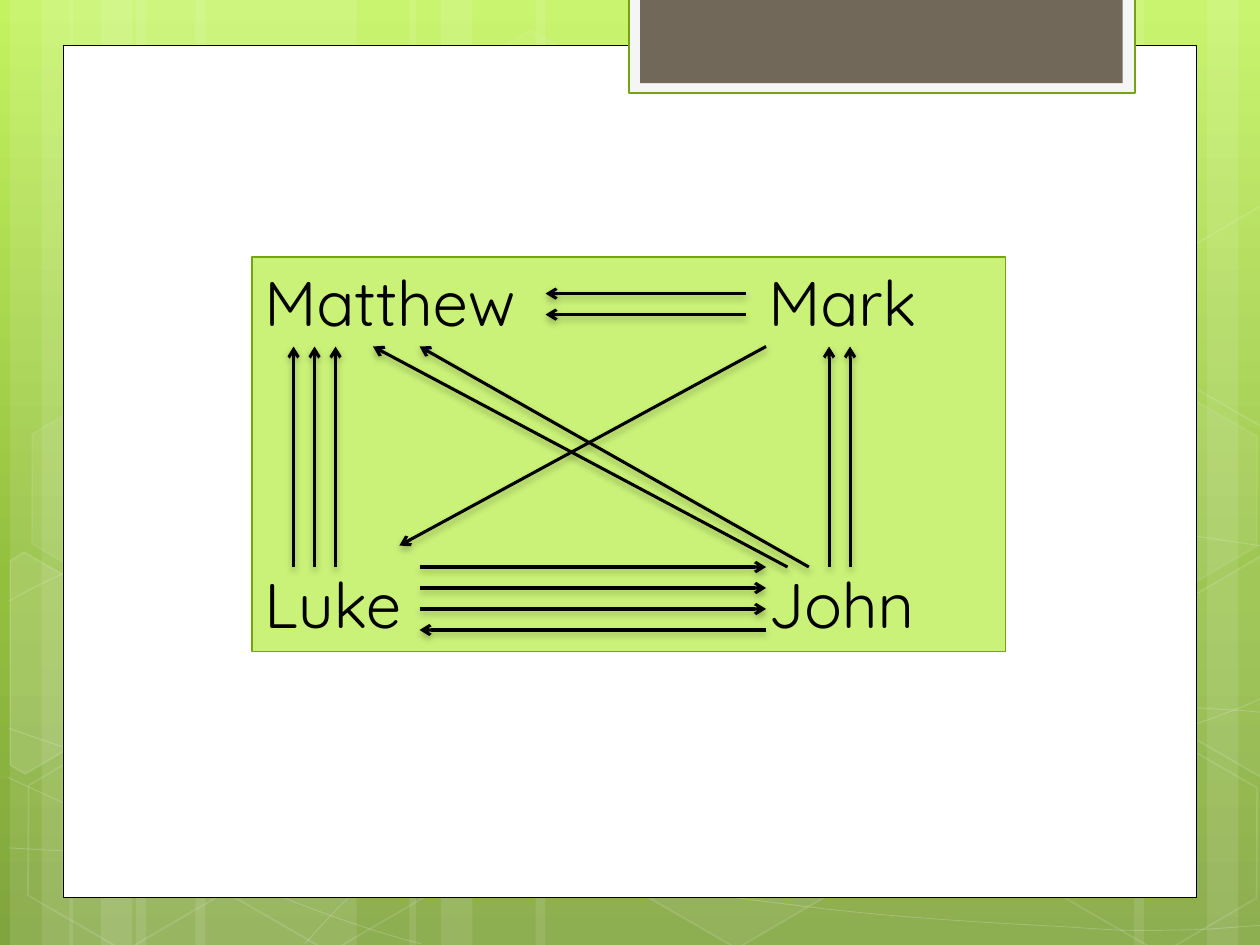
import copy
import dataclasses
import math

import pptx
import pptx.dml.color
import pptx.enum.shapes
import pptx.enum.text
import pptx.oxml
import pptx.oxml.ns
import pptx.util

Inches = pptx.util.Inches
Pt = pptx.util.Pt
qn = pptx.oxml.ns.qn
PRESET = pptx.enum.shapes.MSO_SHAPE


@dataclasses.dataclass(frozen=True)
class Theme:
    """Hold the colours, font and sizes of the slide."""
    sky: tuple = ((0, "C3F35F"), (0.62, "93BF3F"), (1, "81A53E"))
    white: str = "FFFFFF"
    ink: str = "000000"
    tab_rim: str = "F5F5F5"
    tab_core: str = "71685A"
    edge: str = "74A510"
    card: str = "CAF278"
    font: str = "Quicksand"
    name_size: int = 36
    row_gap: float = 129.3
    arrow_width: float = 1.75


@dataclasses.dataclass(frozen=True)
class Box:
    """Hold a region in inches."""
    left: float
    top: float
    width: float
    height: float

    def inner(self, left, top, width, height):
        """Return a box whose place is given relative to this one."""
        return Box(self.left + left, self.top + top, width, height)

    def emu(self):
        """Return the box as lengths."""
        return [Inches(v) for v in (self.left, self.top, self.width, self.height)]


THEME = Theme()
GAP = 1 / 6
TILT = 30
STRIPES = [(1.08, 1.75), (0.08, 0.5), (0.33, 0.83), (1.55, 1.75), (0.55, 0.5), (0.8, 0.83),
           (7.33, 1.75), (9.58, 0.5), (9, 0.83), (4.25, 3.08), (3.25, 0.5), (3.5, 0.83)]
CURVES = [
    [(0.07, 6.73), (0.61, 6.76), (1.15, 6.79), (1.9, 6.78), (2.65, 6.77), (3.58, 6.75),
     (4.58, 6.65), (5.58, 6.55), (7, 6.36), (7.92, 6.17), (8.83, 5.98), (9.77, 5.68), (10.07, 5.51)],
    [(0.07, 4.77), (0.36, 4.61), (0.65, 4.46), (1.21, 4.31), (1.78, 4.16), (2.59, 3.94),
     (3.47, 3.87), (4.36, 3.8), (5.44, 3.79), (6.54, 3.87), (7.64, 3.95), (9.47, 4.26), (10.07, 4.34)],
    [(0.06, 6.17), (1.27, 6.72), (2.47, 7.27), (3.34, 7.49)],
    [(0.07, 5.78), (0.38, 5.89), (0.7, 6), (1.28, 6.16), (1.86, 6.31), (2.73, 6.56), (3.57, 6.73),
     (4.4, 6.9), (5.45, 7.08), (6.28, 7.18), (7.11, 7.29), (8, 7.33), (8.53, 7.36),
     (9.05, 7.4), (9.19, 7.38), (9.45, 7.38), (9.71, 7.37), (9.89, 7.35), (10.07, 7.34)],
    [(2.42, 7.49), (2.6, 7.29), (2.78, 7.09), (3.02, 6.91), (3.26, 6.73), (3.6, 6.53), (3.88, 6.39),
     (4.16, 6.25), (4.33, 6.19), (4.7, 6.09), (5.06, 5.99), (5.73, 5.85), (6.08, 5.78),
     (6.44, 5.71), (6.49, 5.71), (6.8, 5.69), (7.11, 5.66), (7.6, 5.63), (7.94, 5.62),
     (8.29, 5.61), (8.86, 5.62), (8.86, 5.62), (9.08, 5.62), (9.31, 5.62), (9.53, 5.62),
     (9.71, 5.63), (9.88, 5.64), (9.97, 5.65), (10.06, 5.66), (10.03, 5.65), (10.06, 5.66)],
]
HEXAGONS = [(3.34, 0.36, 4, 8), (4.97, 5.89, 6, 12), (0.11, 5.91, 0, 12), (0.14, 3.12, 7, 8),
            (1.74, 5.92, 0, 12), (7.53, 4.53, 10, 12), (8.34, 5.93, 0, 12), (8.34, 3.14, 7, 8)]
CUT_HEXAGONS = [
    ((0.36, 5.35), 10,
     [(0.08, 4.45), (0.19, 4.38), (0.96, 4.82), (0.95, 5.7), (0.2, 6.14), (0.08, 6.07)]),
    ((9.85, 5.2), 4,
     [(9.26, 4.85), (10.01, 4.41), (10.09, 4.46), (10.09, 6.13), (10.02, 6.17), (9.26, 5.73)]),
    ((9.85, 2.41), 0,
     [(9.26, 2.07), (10.01, 1.63), (10.1, 1.68), (10.09, 3.35), (10.02, 3.39), (9.26, 2.95)]),
]
ARROWS = [
    ((3.92, 0.29), (2.33, 0.29), (0, GAP), 2),
    ((4.58, 2.46), (4.58, 0.71), (GAP, 0), 2),
    ((0.33, 2.46), (0.33, 0.71), (GAP, 0), 3),
    ((1.33, 2.46), (4.08, 2.46), (0, GAP), 3),
    ((4.08, 2.96), (1.33, 2.96), (0, 0), 1),
    ((4.42, 2.46), (1.33, 0.71), (0, 0), 1),
    ((4.25, 2.46), (0.96, 0.71), (0, 0), 1),
    ((4.08, 0.71), (1.17, 2.29), (0, 0), 1),
]


def make_xml(tag, attributes="", inside=""):
    """Return a drawing element."""
    return pptx.oxml.parse_xml(
        f'<a:{tag} xmlns:a="{pptx.oxml.ns.nsuri("a")}" {attributes}>{inside}</a:{tag}>')


def rgb(color):
    """Return a colour value from its hex form."""
    return pptx.dml.color.RGBColor.from_string(color)


def set_color(fill, color, owner, opacity):
    """Give a fill a solid colour with an opacity in percent."""
    fill.solid()
    fill.fore_color.rgb = rgb(color)
    if opacity < 100:
        owner.find(qn("a:solidFill"))[0].append(make_xml("alpha", f'val="{opacity * 1000}"'))


def paint(shape, fill=None, line=None, width=1, fill_opacity=100, line_opacity=100):
    """Set the fill and outline of a shape and drop its shadow."""
    properties = shape._element.spPr
    shape.shadow.inherit = False
    if fill and fill_opacity:
        set_color(shape.fill, fill, properties, fill_opacity)
    else:
        shape.fill.background()
    if line:
        shape.line.width = Pt(width)
        set_color(shape.line.fill, line, properties.find(qn("a:ln")), line_opacity)
    else:
        shape.line.fill.background()


def add_panel(slide, box, kind=PRESET.RECTANGLE, **style):
    """Add a painted preset shape."""
    panel = slide.shapes.add_shape(kind, *box.emu())
    paint(panel, **style)
    return panel


def add_outline(slide, box, points, close, **style):
    """Add a painted outline through points relative to the box."""
    corners = [(Inches(box.left + x), Inches(box.top + y)) for x, y in points]
    builder = slide.shapes.build_freeform(*corners[0])
    builder.add_line_segments(corners[1:], close=close)
    outline = builder.convert_to_shape()
    paint(outline, **style)
    return outline


def bend(outline):
    """Turn each three line segments of an outline into one cubic curve."""
    segments = list(outline._element.iter(qn("a:lnTo")))
    for first in range(0, len(segments), 3):
        curve = make_xml("cubicBezTo")
        segments[first].addprevious(curve)
        for segment in segments[first:first + 3]:
            curve.append(segment[0])
            segment.getparent().remove(segment)


def turn(point, center, degrees):
    """Return a point turned clockwise around a center."""
    cos, sin = math.cos(math.radians(degrees)), math.sin(math.radians(degrees))
    dx, dy = point[0] - center[0], point[1] - center[1]
    return center[0] + dx * cos - dy * sin, center[1] + dx * sin + dy * cos


def fill_background(slide):
    """Lay the green gradient behind the slide."""
    fill = slide.background.fill
    fill.gradient()
    fill.gradient_angle = 270
    stops = next(slide._element.iter(qn("a:gsLst")))
    stops.append(copy.deepcopy(stops[0]))
    for stop, (position, color) in zip(fill.gradient_stops, THEME.sky):
        stop.position = position
        stop.color.rgb = rgb(color)


def add_backdrop(slide, box):
    """Place the pale stripes, curves and hexagons."""
    for left, width in STRIPES:
        add_panel(slide, box.inner(left, 0, width, box.height), fill=THEME.white, fill_opacity=10)
    for knots in CURVES:
        bend(add_outline(slide, box, knots, False, line=THEME.white, width=0.5, line_opacity=20))
    for left, top, fill_opacity, line_opacity in HEXAGONS:
        hexagon = add_panel(slide, box.inner(left, top, 1.75, 1.52), PRESET.HEXAGON,
                            fill=THEME.white, fill_opacity=fill_opacity,
                            line=THEME.white, line_opacity=line_opacity)
        hexagon.adjustments[0] = 0.285
        hexagon.rotation = TILT
    for center, opacity, corners in CUT_HEXAGONS:
        upright = [turn(corner, center, -TILT) for corner in corners]
        add_outline(slide, box, upright, True, fill=THEME.white, fill_opacity=opacity,
                    line=THEME.white, line_opacity=12).rotation = TILT


def add_page(slide, box):
    """Place the white page and the tab hanging over its top edge."""
    add_panel(slide, box, fill=THEME.white, line=THEME.ink, width=0.5)
    add_panel(slide, box.inner(4.49, -0.38, 4.02, 0.76),
              fill=THEME.tab_rim, line=THEME.edge, width=1.25)
    add_panel(slide, box.inner(4.58, -0.38, 3.83, 0.68), fill=THEME.tab_core)


def add_gospels(slide, box):
    """Place the card with the four gospel names in its corners."""
    card = add_panel(slide, box, fill=THEME.card, line=THEME.edge, width=0.75)
    frame = card.text_frame
    frame.word_wrap = True
    frame.vertical_anchor = pptx.enum.text.MSO_ANCHOR.MIDDLE
    frame.margin_bottom = Inches(0.08)
    for index, names in enumerate(("Matthew\tMark", "Luke\tJohn")):
        row = frame.add_paragraph() if index else frame.paragraphs[0]
        row.alignment = pptx.enum.text.PP_ALIGN.LEFT
        row.space_before = Pt(THEME.row_gap * index)
        row._p.get_or_add_pPr().append(
            make_xml("tabLst", inside=f'<a:tab pos="{Inches(4)}" algn="l"/>'))
        run = row.add_run()
        run.text = names
        run.font.name = THEME.font
        run.font.size = Pt(THEME.name_size)
        run.font.color.rgb = rgb(THEME.ink)


def add_arrow(slide, start, end):
    """Add one arrow with a soft shadow."""
    arrow = slide.shapes.add_connector(pptx.enum.shapes.MSO_CONNECTOR.STRAIGHT,
                                       *(Inches(v) for v in (*start, *end)))
    arrow.line.width = Pt(THEME.arrow_width)
    arrow.line.color.rgb = rgb(THEME.ink)
    properties = arrow._element.spPr
    properties.find(qn("a:ln")).append(make_xml("tailEnd", 'type="arrow"'))
    properties.append(make_xml("effectLst", inside=(
        f'<a:outerShdw blurRad="{Pt(4)}" dist="{Pt(2)}" dir="5400000" rotWithShape="0">'
        f'<a:srgbClr val="{THEME.ink}"><a:alpha val="28000"/></a:srgbClr></a:outerShdw>')))


def add_links(slide, box):
    """Place the bundles of arrows between the gospels."""
    for start, end, (dx, dy), count in ARROWS:
        for index in range(count):
            shift = (box.left + dx * index, box.top + dy * index)
            add_arrow(slide, *([p + s for p, s in zip(point, shift)] for point in (start, end)))


def main():
    """Build and save the slide."""
    deck = pptx.Presentation()
    deck.slide_width, deck.slide_height = Inches(10), Inches(7.5)
    slide = deck.slides.add_slide(deck.slide_layouts[6])
    diagram = Box(2, 2.04, 5.98, 3.13)
    fill_background(slide)
    add_backdrop(slide, Box(0, 0, 10, 7.5))
    add_page(slide, Box(0.5, 0.36, 9, 6.76))
    add_gospels(slide, diagram)
    add_links(slide, diagram)
    deck.save("out.pptx")


if __name__ == "__main__":
    main()
